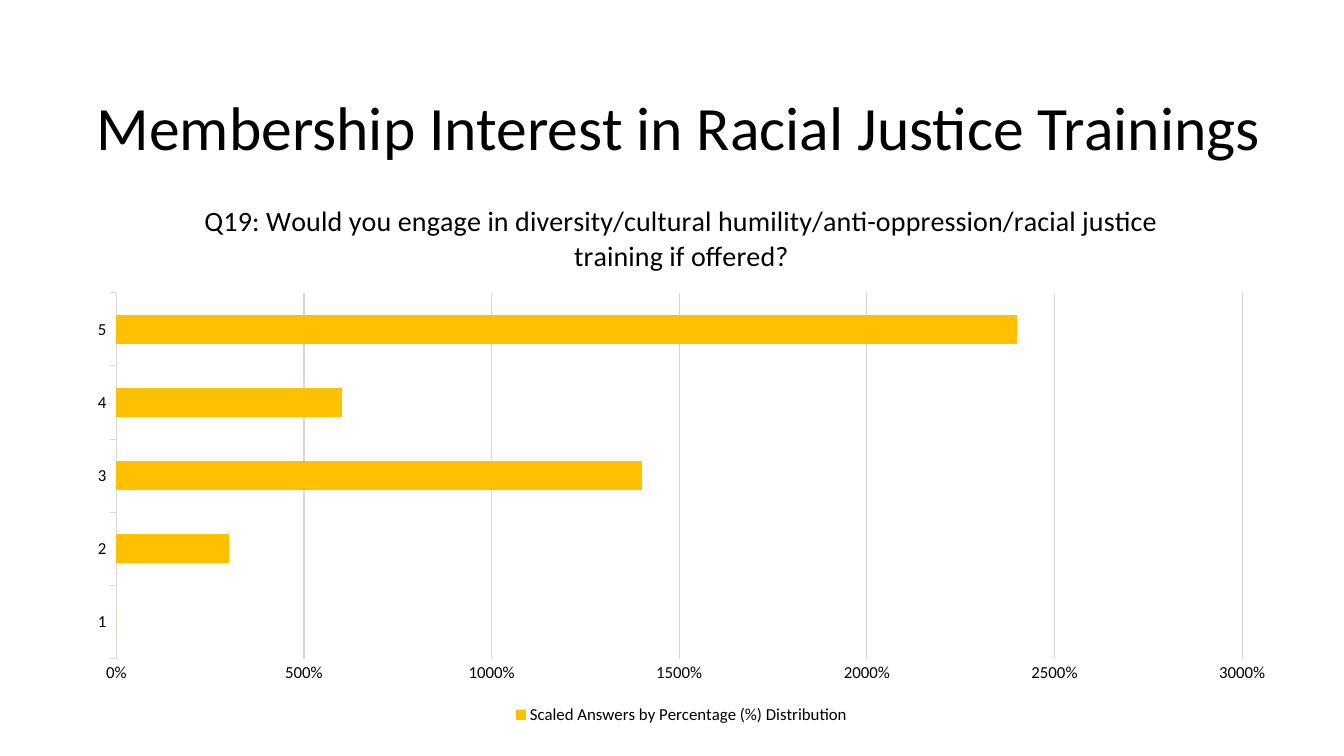
from dataclasses import dataclass

from pptx import Presentation
from pptx import util as u
from pptx.chart import data
from pptx.dml import color
from pptx.enum import chart as ch
from pptx.enum import text


@dataclass(frozen=True)
class Theme:
    """Colours, font and type sizes of the slide."""
    font: str = "Calibri"
    ink: str = "000000"
    grid: str = "D9D9D9"
    bar: str = "FFC000"
    title: int = 44
    question: int = 20
    label: int = 12


THEME = Theme()


def rgb(value):
    """Turn a hex string into a colour."""
    return color.RGBColor.from_string(value)


def style_font(font, size):
    """Apply the theme font at a given size."""
    font.name, font.size, font.bold = THEME.font, u.Pt(size), False
    font.color.rgb = rgb(THEME.ink)


def style_line(line):
    """Give an axis or gridline its thin grey stroke."""
    line.color.rgb, line.width = rgb(THEME.grid), u.Pt(0.75)


def add_title(s, words, box):
    """Add the centred slide heading."""
    tf = s.shapes.add_textbox(*map(u.Inches, box)).text_frame
    tf.word_wrap, tf.vertical_anchor = True, text.MSO_ANCHOR.MIDDLE
    p = tf.paragraphs[0]
    p.text, p.alignment, p.line_spacing = words, text.PP_ALIGN.CENTER, 0.9
    style_font(p.font, THEME.title)


def style_axes(chart):
    """Format the category and percentage axes."""
    cat, val = chart.category_axis, chart.value_axis
    for axis in (cat, val):
        style_font(axis.tick_labels.font, THEME.label)
        axis.minor_tick_mark = ch.XL_TICK_MARK.NONE
    cat.major_tick_mark = ch.XL_TICK_MARK.OUTSIDE
    cat.has_major_gridlines = False
    style_line(cat.format.line)
    val.major_tick_mark = ch.XL_TICK_MARK.NONE
    val.minimum_scale, val.maximum_scale, val.major_unit = 0, 30, 5
    val.tick_labels.number_format = "0%"
    val.tick_labels.number_format_is_linked = False
    val.format.line.fill.background()
    style_line(val.major_gridlines.format.line)


def add_bar_chart(s, question, series_name, answers, box):
    """Add a titled horizontal bar chart of the answers."""
    cd = data.CategoryChartData(number_format="0%")
    cd.categories = list(answers)
    cd.add_series(series_name, answers.values())
    chart = s.shapes.add_chart(
        ch.XL_CHART_TYPE.BAR_CLUSTERED, *map(u.Inches, box), cd).chart
    style_font(chart.font, THEME.label)
    chart.has_title = True
    p = chart.chart_title.text_frame.paragraphs[0]
    p.text = question
    style_font(p.font, THEME.question)
    chart.chart_title.include_in_layout = False
    chart.has_legend = True
    chart.legend.position = ch.XL_LEGEND_POSITION.BOTTOM
    chart.legend.include_in_layout = False
    style_font(chart.legend.font, THEME.label)
    style_axes(chart)
    plot = chart.plots[0]
    plot.gap_width, plot.vary_by_categories = 150, False
    fill = plot.series[0].format.fill
    fill.solid()
    fill.fore_color.rgb = rgb(THEME.bar)


def main():
    """Build and save the slide."""
    prs = Presentation()
    prs.slide_width, prs.slide_height = u.Inches(13.33), u.Inches(7.5)
    s = prs.slides.add_slide(prs.slide_layouts[6])
    add_title(s, "Membership Interest in Racial Justice Trainings",
              (0.53, 0.4, 12.41, 1.79))
    add_bar_chart(
        s,
        "Q19: Would you engage in diversity/cultural humility/"
        "anti-oppression/racial justice training if offered?",
        "Scaled Answers by Percentage (%) Distribution",
        {"1": 0, "2": 3, "3": 14, "4": 6, "5": 24},
        (0.73, 1.78, 12.06, 5.45))
    prs.save("out.pptx")


if __name__ == "__main__":
    main()
